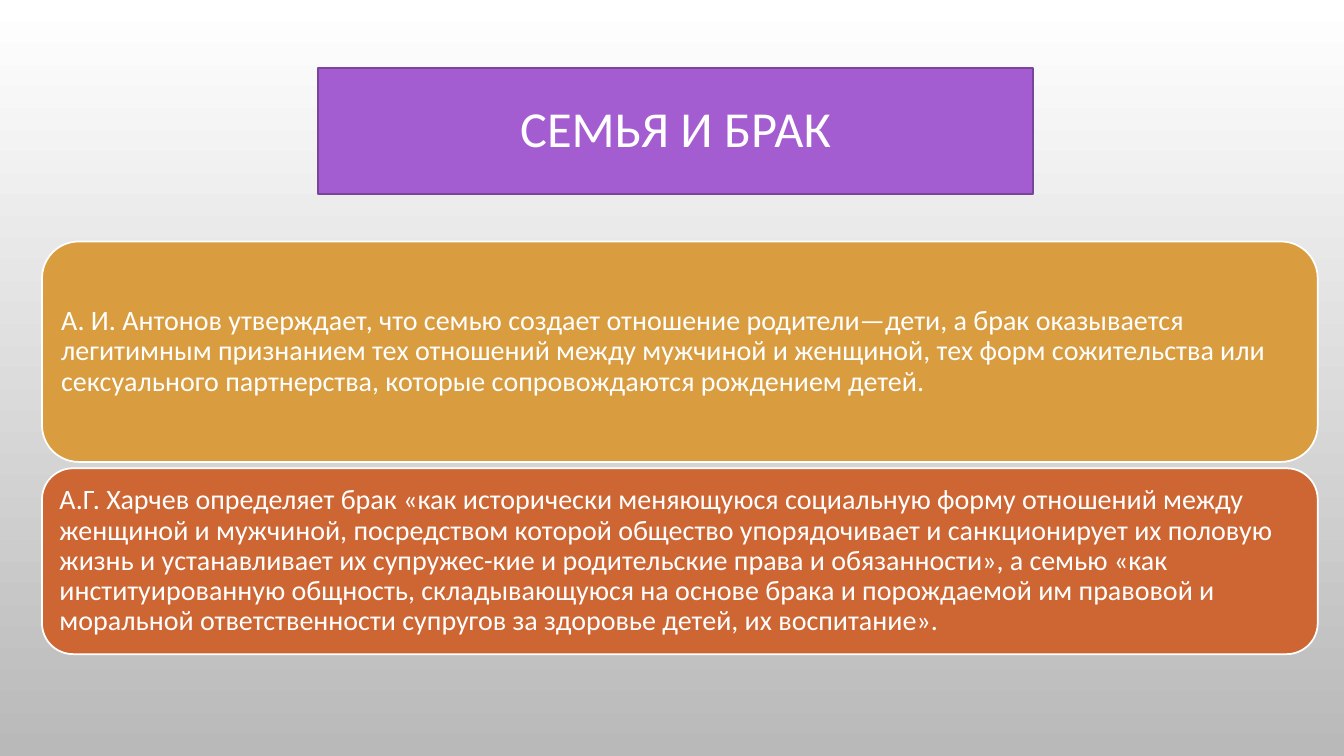
from dataclasses import dataclass

from pptx import Presentation
from pptx.dml.color import RGBColor as Rgb
from pptx.enum.shapes import MSO_SHAPE as Preset
from pptx.enum.text import MSO_ANCHOR as Anchor, MSO_AUTO_SIZE as AutoSize, PP_ALIGN as Align
from pptx.util import Emu, Pt


@dataclass(frozen=True)
class Theme:
    font: str = "Calibri"
    title_size: int = 36
    body_size: int = 20
    line_width: float = 1.25
    line_spacing: float = 0.9
    white: str = "FFFFFF"
    backdrop_end: str = "B9B9B9"
    title_fill: str = "A35DD1"
    title_line: str = "79459B"
    antonov_fill: str = "D99C3F"
    kharchev_fill: str = "CE6633"


THEME = Theme()
PX_PER_INCH = 96
TITLE_BOX = (303, 65, 681, 120)
CARDS_BOX = (40, 230, 1215, 393)
CARD_GAP = 6

TITLE = "СЕМЬЯ И БРАК"
DEFINITIONS = [
    (
        210,
        THEME.antonov_fill,
        "А. И. Антонов утверждает, что семью создает отношение родители—дети, а брак "
        "оказывается легитимным признанием тех отношений между мужчиной и женщиной, тех "
        "форм сожительства или сексуального партнерства, которые сопровождаются рождением детей.",
    ),
    (
        177,
        THEME.kharchev_fill,
        "А.Г. Харчев определяет брак «как исторически меняющуюся социальную форму отношений "
        "между женщиной и мужчиной, посредством которой общество упорядочивает и санкционирует "
        "их половую жизнь и устанавливает их супружес-кие и родительские права и обязанности», "
        "а семью «как институированную общность, складывающуюся на основе брака и порождаемой "
        "им правовой и моральной ответственности супругов за здоровье детей, их воспитание».",
    ),
]


def px(length):
    return Emu(length * 914400 // PX_PER_INCH)


def apply_format(target, values):
    for name, value in values.items():
        setattr(target, name, value)


def paint(shape, fill, line):
    shape.fill.solid()
    shape.fill.fore_color.rgb = Rgb.from_string(fill)
    shape.line.color.rgb = Rgb.from_string(line)
    shape.line.width = Pt(THEME.line_width)


def write(shape, wording, size, align, inset):
    frame = shape.text_frame
    frame.text = wording
    margins = {f"margin_{side}": px(inset) for side in ("left", "top", "right", "bottom")}
    apply_format(frame, {
        "word_wrap": True,
        "auto_size": AutoSize.NONE,
        "vertical_anchor": Anchor.MIDDLE,
        **margins,
    })
    paragraph = frame.paragraphs[0]
    apply_format(paragraph, {"alignment": align, "line_spacing": THEME.line_spacing})
    font = paragraph.runs[0].font
    apply_format(font, {"name": THEME.font, "size": Pt(size)})
    font.color.rgb = Rgb.from_string(THEME.white)


def fill_backdrop(slide):
    fill = slide.background.fill
    fill.gradient()
    fill.gradient_angle = 270
    for stop, color in zip(fill.gradient_stops, (THEME.white, THEME.backdrop_end)):
        stop.color.rgb = Rgb.from_string(color)


def place_title(slide, box):
    title = slide.shapes.title
    apply_format(title, dict(zip(("left", "top", "width", "height"), map(px, box))))
    paint(title, THEME.title_fill, THEME.title_line)
    write(title, TITLE, THEME.title_size, Align.CENTER, 8)


def place_definitions(slide, box):
    left, top, width, _ = box
    for height, fill, wording in DEFINITIONS:
        card = slide.shapes.add_shape(
            Preset.ROUNDED_RECTANGLE, px(left), px(top), px(width), px(height)
        )
        card.shadow.inherit = False
        paint(card, fill, THEME.white)
        write(card, wording, THEME.body_size, Align.LEFT, 8)
        top += height + CARD_GAP


def main():
    deck = Presentation()
    apply_format(deck, {"slide_width": px(1280), "slide_height": px(720)})
    slide = deck.slides.add_slide(deck.slide_layouts.get_by_name("Title Only"))
    fill_backdrop(slide)
    place_title(slide, TITLE_BOX)
    place_definitions(slide, CARDS_BOX)
    deck.save("out.pptx")


if __name__ == "__main__":
    main()
